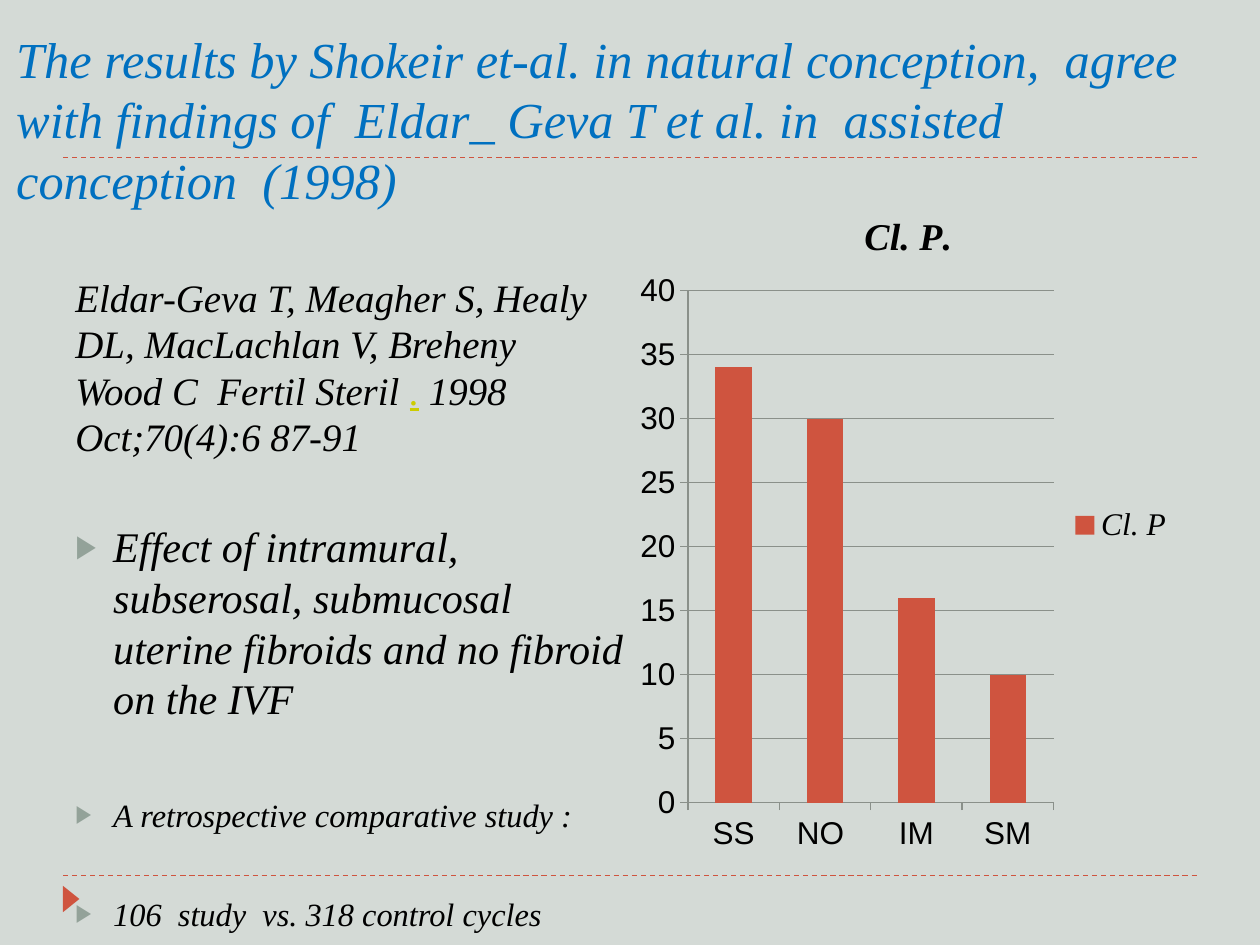
from lxml import etree
from pptx import Presentation
from pptx.chart.data import CategoryChartData
from pptx.dml.color import RGBColor
from pptx.enum.chart import XL_CHART_TYPE as ChartType, XL_LEGEND_POSITION as LegendPos
from pptx.enum.chart import XL_TICK_MARK as Tick
from pptx.enum.dml import MSO_LINE
from pptx.enum.shapes import MSO_CONNECTOR, MSO_SHAPE
from pptx.enum.text import MSO_ANCHOR
from pptx.oxml import parse_xml
from pptx.oxml.ns import nsdecls, qn
from pptx.util import Pt

BACKGROUND = RGBColor(0xD4, 0xDA, 0xD6)
RED = RGBColor(0xCF, 0x54, 0x3F)
BLUE = RGBColor(0x00, 0x70, 0xC0)
BLACK = RGBColor(0, 0, 0)
YELLOW = RGBColor(0xCC, 0xCC, 0x00)
BULLET = RGBColor(0x93, 0xA2, 0x99)
GRID = RGBColor(0x8A, 0x90, 0x8A)
SERIF, SANS = "Times New Roman", "Arial"
LEADING = 1.2
INDENT = 21.6

# Content: each paragraph is its runs plus its format
TITLE = [dict(
    runs=["The results by Shokeir et-al. in natural conception,  agree with findings of  "
          "Eldar_ Geva T et al. in  assisted conception  (1998)"],
    size=28.8, color=BLUE)]
BODY = [
    dict(runs=["Eldar-Geva T, Meagher S, Healy DL, MacLachlan V, Breheny \vWood C  Fertil Steril ",
               (".", YELLOW), " 1998 Oct;70(4):6 87-91"], size=22.2),
    dict(runs=["Effect of intramural, subserosal, submucosal uterine fibroids and no fibroid "
               "on the IVF"], size=24.1, before=35, bullet=True),
    dict(runs=["A retrospective comparative study :"], size=18.5, before=41, bullet=True),
    dict(runs=["106  study  vs. 318 control cycles"], size=18.5, before=34.4, bullet=True),
]
CHART_TITLE, SERIES = "Cl. P.", "Cl. P"
RATES = {"SS": 34, "NO ": 30, "IM": 16, "SM": 10}
PLOT = dict(x=0.104, y=0.155, w=0.657, h=0.753)  # inner plot area, share of chart
RULES_Y = (90, 500.4)


def set_font(font, name, size, color, bold=False, italic=False):
    font.name, font.size, font.bold, font.italic = name, Pt(size), bold, italic
    font.color.rgb = color


def add_bullet(p):
    pPr = p._p.get_or_add_pPr()
    pPr.set("marL", str(Pt(INDENT)))
    pPr.set("indent", str(-Pt(INDENT)))
    for xml in (f'<a:buClr {nsdecls("a")}><a:srgbClr val="{BULLET}"/></a:buClr>',
                f'<a:buSzPct {nsdecls("a")} val="76000"/>',
                f'<a:buFont {nsdecls("a")} typeface="{SANS}"/>',
                f'<a:buChar {nsdecls("a")} char="▶"/>'):
        pPr.append(parse_xml(xml))


def fill_paragraph(p, runs, size, color=BLACK, before=0, bullet=False):
    p.line_spacing = Pt(round(size * LEADING, 1))
    p.space_before = Pt(before)
    if bullet:
        add_bullet(p)
    for run in runs:
        text, run_color = run if isinstance(run, tuple) else (run, color)
        for i, part in enumerate(text.split("\v")):
            if i:
                p.add_line_break()
            r = p.add_run()
            r.text = part
            set_font(r.font, SERIF, size, run_color, italic=True)
            r.font.underline = run_color == YELLOW


def add_text(slide, paragraphs, left, top, width, height, margin_top):
    tf = slide.shapes.add_textbox(Pt(left), Pt(top), Pt(width), Pt(height)).text_frame
    tf.word_wrap = True
    tf.vertical_anchor = MSO_ANCHOR.TOP
    tf.margin_top = Pt(margin_top)
    for i, paragraph in enumerate(paragraphs):
        fill_paragraph(tf.add_paragraph() if i else tf.paragraphs[0], **paragraph)


def add_rule(slide, y):
    line = slide.shapes.add_connector(MSO_CONNECTOR.STRAIGHT, Pt(36), Pt(y), Pt(684), Pt(y))
    line.line.color.rgb = RED
    line.line.width = Pt(0.75)
    line.line.dash_style = MSO_LINE.DASH
    etree.SubElement(line._element.spPr, qn("a:effectLst"))


def add_rate_chart(slide):
    data = CategoryChartData()
    data.categories = list(RATES)
    data.add_series(SERIES, list(RATES.values()))
    chart = slide.shapes.add_chart(ChartType.COLUMN_CLUSTERED, Pt(360), Pt(105.8),
                                   Pt(318.2), Pt(388.8), data).chart
    set_font(chart.font, SANS, 18, BLACK)

    chart.has_title = True
    chart.chart_title.include_in_layout = False
    r = chart.chart_title.text_frame.paragraphs[0].add_run()
    r.text = CHART_TITLE
    set_font(r.font, SERIF, 21.6, BLACK, bold=True, italic=True)

    chart.has_legend = True
    chart.legend.position = LegendPos.RIGHT
    chart.legend.include_in_layout = False
    set_font(chart.legend.font, SERIF, 18, BLACK, italic=True)

    plot = chart.plots[0]
    plot.gap_width = 150
    plot.vary_by_categories = False
    fill = plot.series[0].format.fill
    fill.solid()
    fill.fore_color.rgb = RED

    value_axis = chart.value_axis
    value_axis.minimum_scale, value_axis.maximum_scale, value_axis.major_unit = 0, 40, 5
    value_axis.has_major_gridlines = True
    for axis in (chart.category_axis, value_axis):
        axis.major_tick_mark = Tick.OUTSIDE
        set_font(axis.tick_labels.font, SANS, 18, BLACK)
    for part in (chart.category_axis, value_axis, value_axis.major_gridlines):
        part.format.line.color.rgb = GRID
        part.format.line.width = Pt(0.75)

    # Fixed inner plot area
    area = chart._chartSpace.chart.plotArea
    for old in area.findall(qn("c:layout")):
        area.remove(old)
    modes = '<c:layoutTarget val="inner"/><c:xMode val="edge"/><c:yMode val="edge"/>'
    sizes = "".join(f'<c:{key} val="{value}"/>' for key, value in PLOT.items())
    area.insert(0, parse_xml(f'<c:layout {nsdecls("c")}><c:manualLayout>{modes}{sizes}'
                             '</c:manualLayout></c:layout>'))


def main():
    prs = Presentation()
    prs.slide_width, prs.slide_height = Pt(720), Pt(540)
    slide = prs.slides.add_slide(prs.slide_layouts[6])
    slide.background.fill.solid()
    slide.background.fill.fore_color.rgb = BACKGROUND

    # Rules and corner marker
    for y in RULES_Y:
        add_rule(slide, y)
    sp = slide.shapes.add_shape(MSO_SHAPE.ISOSCELES_TRIANGLE, Pt(33.1), Pt(509), Pt(15.1), Pt(9.4))
    sp.rotation = 90
    sp.shadow.inherit = False
    sp.fill.solid()
    sp.fill.fore_color.rgb = RED
    sp.line.fill.background()

    # Text and chart
    add_text(slide, TITLE, 2.2, 0, 693.4, 151.2, margin_top=15.8)
    add_text(slide, BODY, 36, 116.6, 329.8, 367.9, margin_top=39.6)
    add_rate_chart(slide)
    prs.save("out.pptx")


if __name__ == "__main__":
    main()
